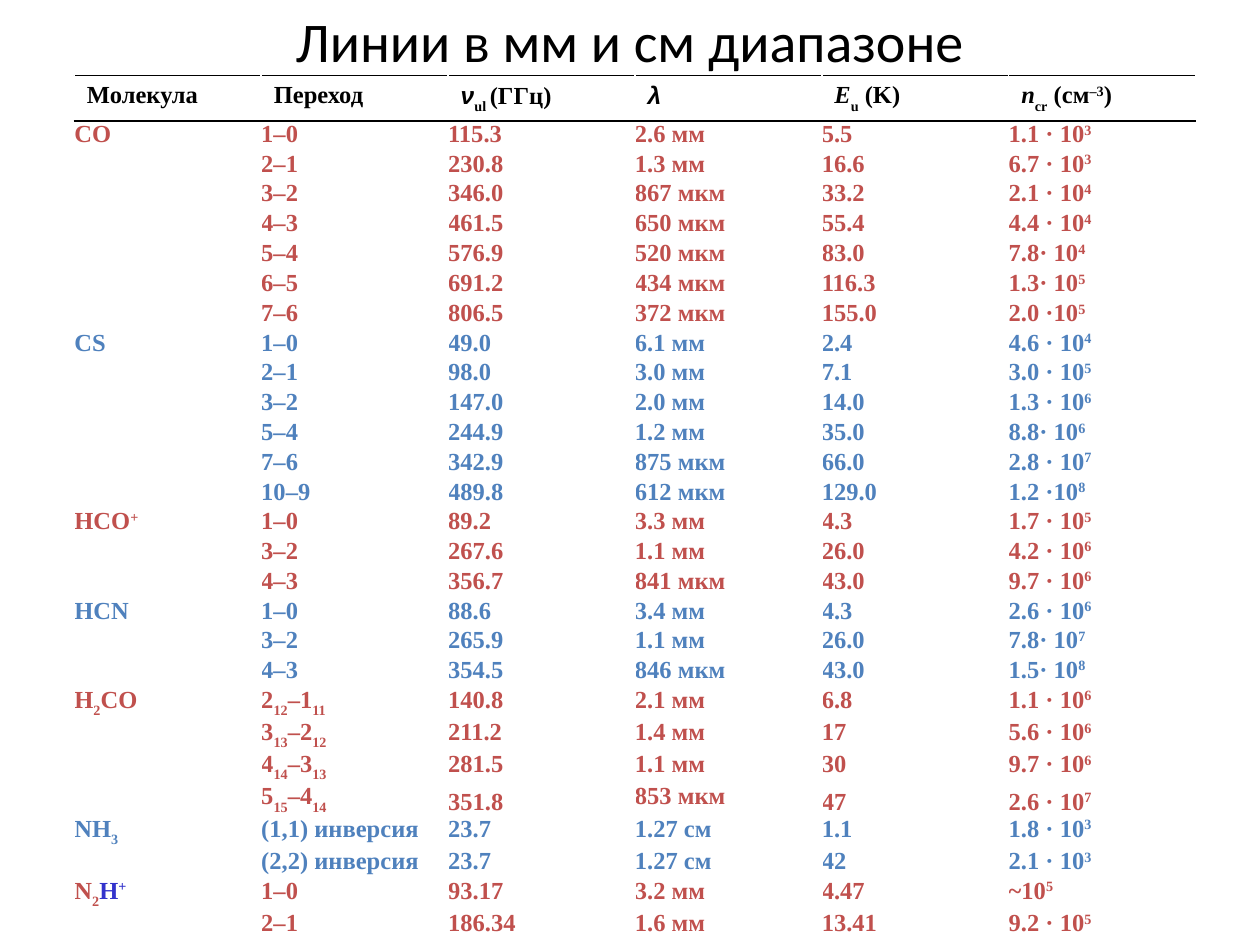
import lxml.etree
import pptx
import pptx.dml.color
import pptx.enum.text
import pptx.oxml.ns
import pptx.util

Inches = pptx.util.Inches
Pt = pptx.util.Pt
RGBColor = pptx.dml.color.RGBColor
MSO_ANCHOR = pptx.enum.text.MSO_ANCHOR

BLACK = RGBColor(0x00, 0x00, 0x00)
WHITE = RGBColor(0xFF, 0xFF, 0xFF)
RED = RGBColor(0xC0, 0x50, 0x4D)
BLUE = RGBColor(0x4F, 0x81, 0xBD)
DEEP_BLUE = RGBColor(0x33, 0x33, 0xCC)

TITLE = "Линии в мм и см диапазоне"
TEXT_SIZE = Pt(14)
HEADER_HEIGHT = 0.33
LAST_HEIGHT = 0.32

# Markup: _ subscript, ^ superscript, * italic, # deep blue, | plain again
MARKS = "_^*#"
BASELINES = {"_": "-30000", "^": "30000"}

HEADERS = ["Молекула", "Переход", "*ν_ul |(ГГц)", "*λ", "*E_u| (K)", "*n_cr| (см^–3|)"]
MOLECULES = [
    ("CO", [
        ("1–0", "115.3", "2.6 мм", "5.5", "1.1 · 10^3"),
        ("2–1", "230.8", "1.3 мм", "16.6", "6.7 · 10^3"),
        ("3–2", "346.0", "867 мкм", "33.2", "2.1 · 10^4"),
        ("4–3", "461.5", "650 мкм", "55.4", "4.4 · 10^4"),
        ("5–4", "576.9", "520 мкм", "83.0", "7.8· 10^4"),
        ("6–5", "691.2", "434 мкм", "116.3", "1.3· 10^5"),
        ("7–6", "806.5", "372 мкм", "155.0", "2.0 ·10^5"),
    ]),
    ("CS", [
        ("1–0", "49.0", "6.1 мм", "2.4", "4.6 · 10^4"),
        ("2–1", "98.0", "3.0 мм", "7.1", "3.0 · 10^5"),
        ("3–2", "147.0", "2.0 мм", "14.0", "1.3 · 10^6"),
        ("5–4", "244.9", "1.2 мм", "35.0", "8.8· 10^6"),
        ("7–6", "342.9", "875 мкм", "66.0", "2.8 · 10^7"),
        ("10–9", "489.8", "612 мкм", "129.0", "1.2 ·10^8"),
    ]),
    ("HCO^+", [
        ("1–0", "89.2", "3.3 мм", "4.3", "1.7 · 10^5"),
        ("3–2", "267.6", "1.1 мм", "26.0", "4.2 · 10^6"),
        ("4–3", "356.7", "841 мкм", "43.0", "9.7 · 10^6"),
    ]),
    ("HCN", [
        ("1–0", "88.6", "3.4 мм", "4.3", "2.6 · 10^6"),
        ("3–2", "265.9", "1.1 мм", "26.0", "7.8· 10^7"),
        ("4–3", "354.5", "846 мкм", "43.0", "1.5· 10^8"),
    ]),
    ("Н_2|СО", [
        ("2_12|–1_11", "140.8", "2.1 мм", "6.8", "1.1 · 10^6"),
        ("3_13|–2_12", "211.2", "1.4 мм", "17", "5.6 · 10^6"),
        ("4_14|–3_13", "281.5", "1.1 мм", "30", "9.7 · 10^6"),
        ("5_15|–4_14", "351.8", "853 мкм", "47", "2.6 · 10^7"),
    ]),
    ("NH_3", [
        ("(1,1) инверсия", "23.7", "1.27 см", "1.1", "1.8 · 10^3"),
        ("(2,2) инверсия", "23.7", "1.27 см", "42", "2.1 · 10^3"),
    ]),
    ("N_2#H^+", [
        ("1–0", "93.17", "3.2 мм", "4.47", "~10^5"),
        ("2–1", "186.34", "1.6 мм", "13.41", "9.2 · 10^5"),
    ]),
]


def add_spans(para, text, color):
    for mark in MARKS:
        text = text.replace(mark, "|" + mark)
    for piece in filter(None, text.split("|")):
        mark = piece[0] if piece[0] in MARKS else ""
        if mark == "#":
            color = DEEP_BLUE
        span = para.add_run()
        span.text = piece[len(mark):]
        span.font.name = "Arial" if span.text in ("ν", "λ") else "Times New Roman"
        span.font.size = TEXT_SIZE
        span.font.bold = True
        span.font.italic = mark == "*"
        span.font.color.rgb = color
        if mark in BASELINES:
            span._r.get_or_add_rPr().set("baseline", BASELINES[mark])


def add_border(cell, side):
    qn = pptx.oxml.ns.qn
    line = lxml.etree.SubElement(cell._tc.get_or_add_tcPr(), qn("a:ln" + side), w=str(Pt(1)))
    fill = lxml.etree.SubElement(line, qn("a:solidFill"))
    lxml.etree.SubElement(fill, qn("a:srgbClr"), val=str(BLACK))


def fill_cell(cell, text, color, sides="", insets=(0, 0)):
    for side in sides:
        add_border(cell, side)
    cell.fill.solid()
    cell.fill.fore_color.rgb = WHITE
    cell.margin_left = cell.margin_right = Inches(insets[0])
    cell.margin_top = cell.margin_bottom = Inches(insets[1])
    para = cell.text_frame.paragraphs[0]
    if text:
        add_spans(para, text, color)
    else:
        end = lxml.etree.SubElement(para._p, pptx.oxml.ns.qn("a:endParaRPr"))
        end.set("sz", str(TEXT_SIZE.centipoints))


def place_title(page, left, top, width, height):
    title = page.shapes.title
    title.left, title.top = Inches(left), Inches(top)
    title.width, title.height = Inches(width), Inches(height)
    frame = title.text_frame
    frame.vertical_anchor = MSO_ANCHOR.MIDDLE
    para = frame.paragraphs[0]
    para.alignment = pptx.enum.text.PP_ALIGN.CENTER
    span = para.add_run()
    span.text = TITLE
    span.font.name = "Calibri"
    span.font.size = Pt(32)
    span.font.color.rgb = BLACK


def add_line_table(page, left, top, width, height):
    rows = []
    for index, (molecule, transitions) in enumerate(MOLECULES):
        color = BLUE if index % 2 else RED
        for number, values in enumerate(transitions):
            rows.append((color, ["" if number else molecule, *values]))

    frame = page.shapes.add_table(len(rows) + 1, len(HEADERS), Inches(left), Inches(top),
                                  Inches(width), Inches(height))
    table = frame.table
    table.first_row = table.horz_banding = False
    for column in table.columns:
        column.width = Inches(width / len(HEADERS))
    body_height = (height - HEADER_HEIGHT - LAST_HEIGHT) / (len(rows) - 1)
    for row in table.rows:
        row.height = Inches(body_height)
    table.rows[0].height = Inches(HEADER_HEIGHT)
    table.rows[len(rows)].height = Inches(LAST_HEIGHT)

    for column, text in enumerate(HEADERS):
        fill_cell(table.cell(0, column), text, BLACK, "TB", (0.1, 0.05))
    for number, (color, texts) in enumerate(rows, 1):
        sides = {1: "T", len(rows): "B"}.get(number, "")
        for column, text in enumerate(texts):
            cell = table.cell(number, column)
            fill_cell(cell, text, color, sides)
            if texts[1].startswith("5_15") and column in (1, 2, 4, 5):
                cell.vertical_anchor = MSO_ANCHOR.BOTTOM


def main():
    deck = pptx.Presentation()
    deck.slide_width, deck.slide_height = Inches(10), Inches(7.5)
    page = deck.slides.add_slide(deck.slide_layouts[5])
    place_title(page, 0.75, 0, 8.5, 0.64)
    add_line_table(page, 0.59, 0.6, 8.9, 6.72)
    deck.save("out.pptx")


if __name__ == "__main__":
    main()
